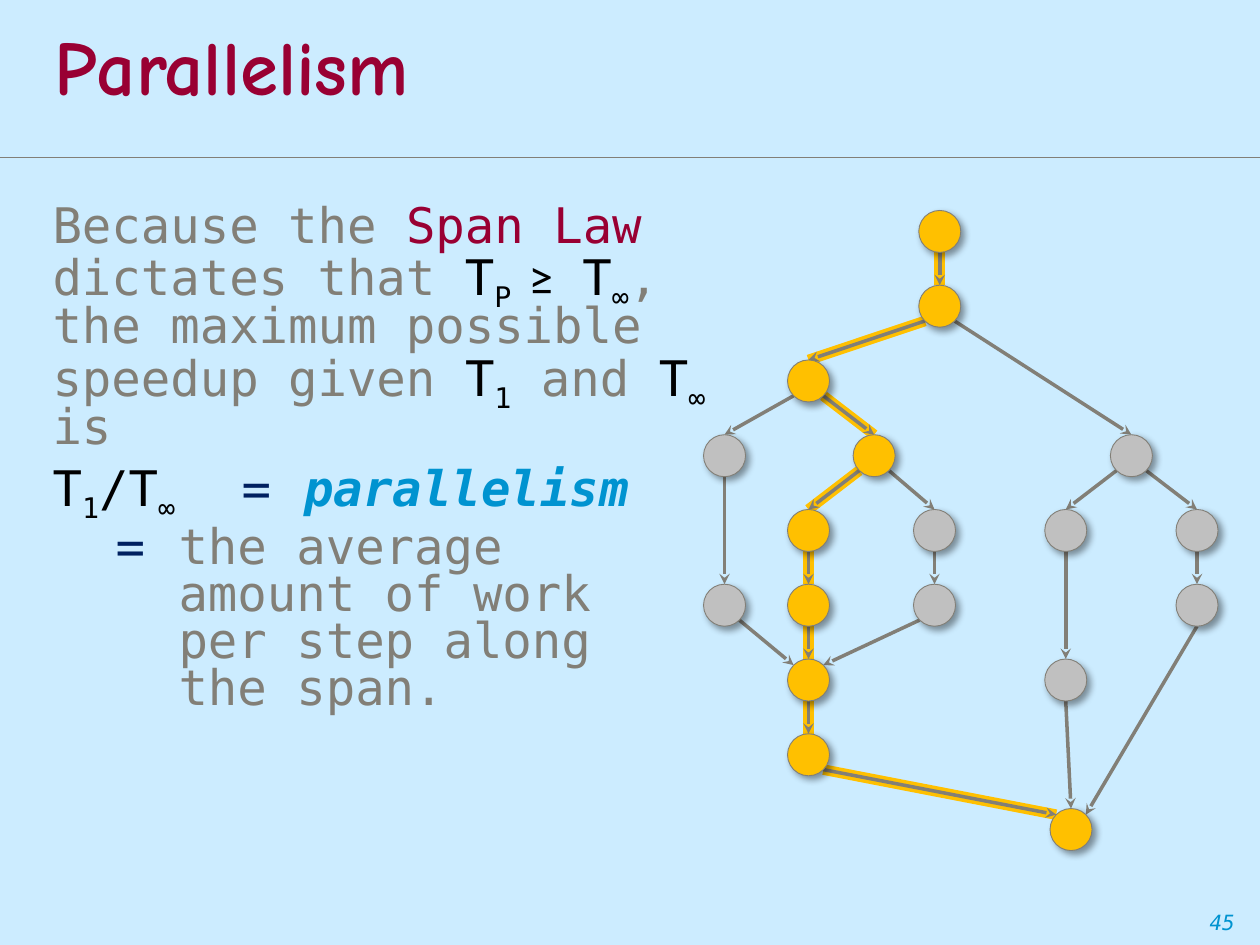
"""Build the Parallelism slide with its computation graph."""
from math import sqrt

from lxml.etree import SubElement as Sub
from pptx import Presentation
from pptx.dml.color import RGBColor as RGB
from pptx.enum.shapes import MSO_CONNECTOR as LINK, MSO_SHAPE as SHAPE
from pptx.enum.text import MSO_ANCHOR as ANCHOR
from pptx.oxml.ns import qn
from pptx.util import Pt

SKY = RGB(0xCC, 0xEC, 0xFF)
STONE = RGB(0x82, 0x7F, 0x77)
WINE = RGB(0x99, 0x00, 0x33)
BLACK = RGB(0x00, 0x00, 0x00)
NAVY = RGB(0x00, 0x20, 0x60)
BLUE = RGB(0x00, 0x93, 0xD0)
GOLD = RGB(0xFF, 0xC0, 0x00)
SILVER = RGB(0xC0, 0xC0, 0xC0)

MONO = "DejaVu Sans Mono"
SUB = {"sub": True}
RADIUS, TOP, STEP = 12, 132.25, 42.72

NODES = {
    "a": (537, 0), "b": (537, 1), "c": (462, 2), "d": (499.5, 3),
    "e": (462, 4), "f": (462, 5), "g": (462, 6), "h": (462, 7),
    "z": (612, 8), "l": (414, 3), "m": (414, 5), "n": (534, 4),
    "o": (534, 5), "r": (646.5, 3), "s": (684, 4), "u": (609, 4),
    "v": (609, 6), "w": (684, 5),
}
SPAN = [
    ("a", "b", 0, 0), ("b", "c", -1, 0), ("c", "d", 1, 0), ("d", "e", -1, 0),
    ("e", "f", 0, 0), ("f", "g", 0, 0), ("g", "h", 0, 0), ("h", "z", 1, -1),
]
SIDE = [
    ("b", "r", 1, 0), ("c", "l", -1, 0), ("l", "m", 0, 0), ("d", "n", 1, 0),
    ("m", "g", 1, -1), ("r", "s", 1, 0), ("o", "g", -1, 1), ("n", "o", 0, 0),
    ("r", "u", -1, 0), ("u", "v", 0, 0), ("s", "w", 0, 0), ("w", "z", 0, 1),
    ("v", "z", 0, 0),
]
BODY = [
    [("Because the ", STONE), ("Span Law ", WINE), ("dictates that", STONE),
     (" T", BLACK), ("P ", BLACK, SUB), ("≥", BLACK, {"name": "Calibri"}),
     (" T", BLACK), ("∞", BLACK, SUB),
     (", the maximum possible speedup given ", STONE),
     ("T", BLACK), ("1", BLACK, SUB), (" and ", STONE),
     ("T", BLACK), ("∞", BLACK, SUB), (" is", STONE)],
    [("T", BLACK), ("1", BLACK, SUB), ("/T", BLACK), ("∞ \t", BLACK, SUB),
     ("=\t", NAVY), ("parallelism", BLUE, {"bold": True, "italic": True})],
    [("\t=\t", NAVY),
     ("the average \n\t\tamount of work \n\t\tper step along \n\t\tthe span.", STONE)],
]


def center(key):
    x, row = NODES[key]
    return x, TOP + row * STEP


def site(key, side, sign):
    x, y = center(key)
    reach = RADIUS / sqrt(2) if side else RADIUS
    return x + side * reach, y + sign * reach


def ends(edge):
    start, end, out, into = edge
    return site(start, out, 1), site(end, into, -1)


class Deck:
    """Holds the style and the current slide."""

    def __init__(self):
        self.file = Presentation()
        self.file.slide_width, self.file.slide_height = Pt(720), Pt(540)
        self.slide = self.file.slides.add_slide(self.file.slide_layouts[6])
        fill = self.slide.background.fill
        fill.solid()
        fill.fore_color.rgb = SKY
        self.shapes = self.slide.shapes

    def text(self, box, paras, font, para=None, frame=None, tabs=()):
        area = self.shapes.add_textbox(*map(Pt, box)).text_frame
        for key, val in {"word_wrap": True, **(frame or {})}.items():
            setattr(area, key, val)
        for index, runs in enumerate(paras):
            block = area.add_paragraph() if index else area.paragraphs[0]
            for key, val in (para or {}).items():
                setattr(block, key, val)
            if tabs:
                stops = Sub(block._p.get_or_add_pPr(), qn("a:tabLst"))
                for stop in tabs:
                    Sub(stops, qn("a:tab"), pos=str(Pt(stop)), algn="l")
            for words, color, *extra in runs:
                self.run(block, words, color, {**font, **(extra[0] if extra else {})})

    def run(self, block, words, color, style):
        for index, part in enumerate(words.split("\n")):
            if index:
                block.add_line_break()
            run = block.add_run()
            run.text = part
            run.font.color.rgb = color
            for key, val in style.items():
                if key == "sub":
                    run._r.get_or_add_rPr().set("baseline", "-25000")
                else:
                    setattr(run.font, key, val)

    def line(self, start, end, color, width, arrow=False):
        link = self.shapes.add_connector(LINK.STRAIGHT, *map(Pt, start + end))
        link.line.color.rgb = color
        link.line.width = Pt(width)
        if arrow:
            Sub(link.line._get_or_add_ln(), qn("a:tailEnd"), type="stealth")
        Sub(link._element.spPr, qn("a:effectLst"))

    def node(self, key, color):
        x, y = center(key)
        box = (x - RADIUS, y - RADIUS, 2 * RADIUS, 2 * RADIUS)
        dot = self.shapes.add_shape(SHAPE.OVAL, *map(Pt, box))
        dot.fill.solid()
        dot.fill.fore_color.rgb = color
        dot.line.color.rgb = STONE
        dot.line.width = Pt(0.5)
        dot.shadow.inherit = False
        glow = dot._element.spPr.find(qn("a:effectLst"))
        shade = Sub(glow, qn("a:outerShdw"), blurRad=str(Pt(4)), dist=str(Pt(3)),
                    dir="2700000", algn="tl", rotWithShape="0")
        tint = Sub(shade, qn("a:srgbClr"), val=str(BLACK))
        Sub(tint, qn("a:alpha"), val="40000")


def main():
    deck = Deck()
    deck.text((0, 516, 720, 21.6), [[("45", BLUE)]],
              {"name": MONO, "size": Pt(12), "italic": True},
              frame={"vertical_anchor": ANCHOR.BOTTOM, "margin_left": Pt(691.2)})
    deck.line((0, 90), (720, 90), STONE, 0.75)
    deck.text((24, 5, 696, 72), [[("Parallelism", WINE)]],
              {"name": "Comic Neue", "size": Pt(44), "bold": True},
              {"line_spacing": 0.86}, {"vertical_anchor": ANCHOR.MIDDLE})
    deck.text((23, 114, 427, 302), BODY, {"name": MONO, "size": Pt(28)},
              {"line_spacing": 0.8, "space_before": Pt(5.6)},
              tabs=(36, 72, 108, 144))
    for edge in SPAN:
        deck.line(*ends(edge), GOLD, 6)
    for edge in SPAN + SIDE:
        deck.line(*ends(edge), STONE, 2, True)
    gold = {key for edge in SPAN for key in edge[:2]}
    for key in NODES:
        deck.node(key, GOLD if key in gold else SILVER)
    deck.file.save("out.pptx")


if __name__ == "__main__":
    main()
